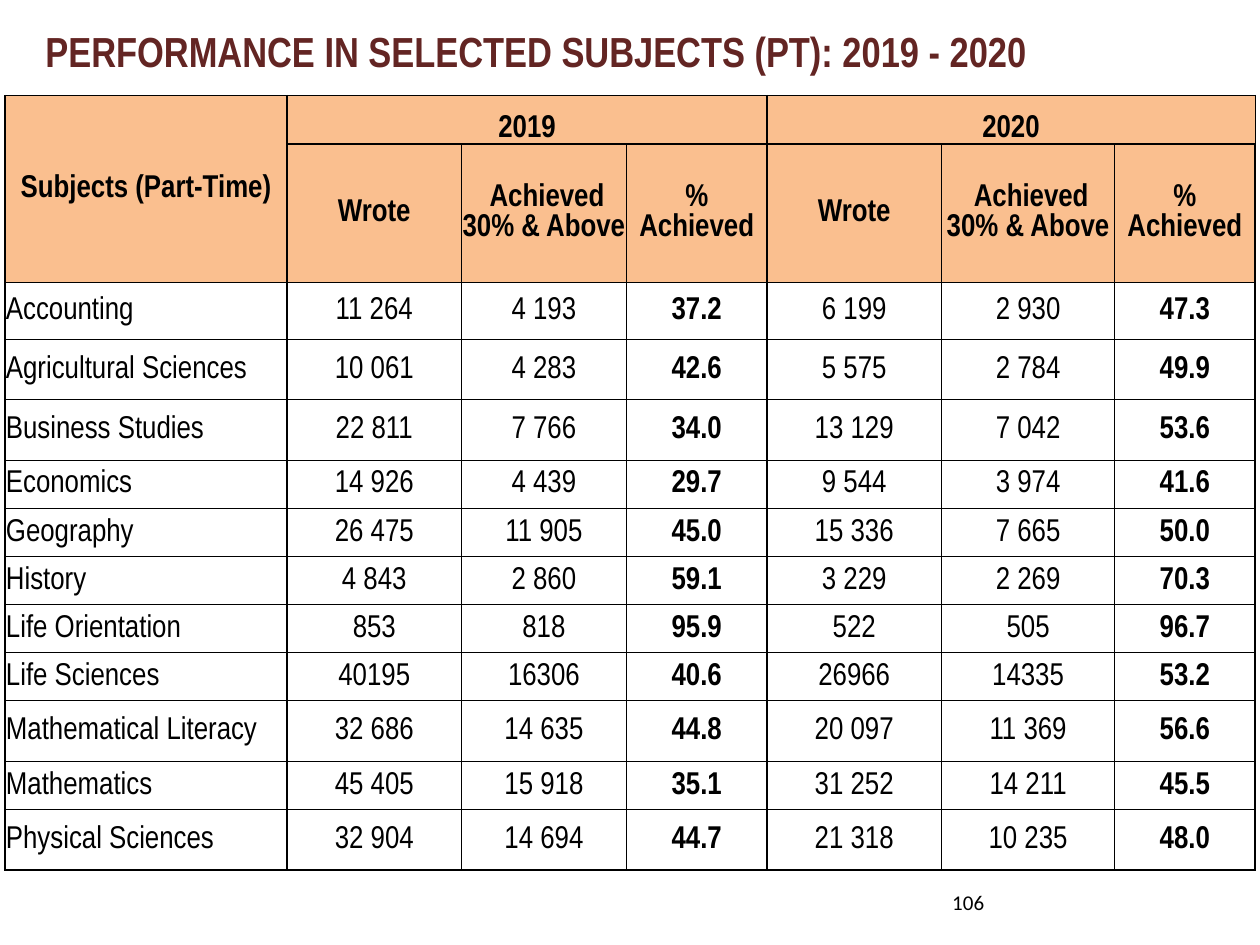
"""Build the slide on part-time performance in selected subjects, 2019 - 2020."""
import dataclasses

import pptx
import pptx.dml.color
import pptx.enum.text
import pptx.oxml
import pptx.oxml.ns
import pptx.util

Cm = pptx.util.Cm
Pt = pptx.util.Pt
RGBColor = pptx.dml.color.RGBColor
ALIGN = pptx.enum.text.PP_ALIGN
ANCHOR = pptx.enum.text.MSO_ANCHOR

BLACK = RGBColor(0x00, 0x00, 0x00)
MAROON = RGBColor(0x63, 0x25, 0x23)
PEACH = RGBColor(0xFA, 0xBF, 0x8F)

COL_WIDTHS = (5.69, 3.51, 3.33, 2.83, 3.52, 3.49, 2.83)
HEADER_HEIGHTS = (0.97, 2.79)
LOW, MID, HIGH = 0.97, 1.15, 1.22
PERCENT_COLS = (3, 6)
THICK_COL_EDGES = (0, 1, 4, 7)
THICK_ROW_EDGES = (0, 1, 2, 13)
YEAR_HEADS = ("Wrote", " Achieved 30% & Above", "% Achieved")


@dataclasses.dataclass
class Subject:
    """One subject with its row height and its figures for both years."""

    name: str
    height: float
    y2019: tuple[str, str, str]
    y2020: tuple[str, str, str]


SUBJECTS = [
    Subject("Accounting", MID, ("11 264", "4 193", "37.2"), ("6 199", "2 930", "47.3")),
    Subject("Agricultural Sciences", HIGH, ("10 061", "4 283", "42.6"), ("5 575", "2 784", "49.9")),
    Subject("Business Studies", HIGH, ("22 811", "7 766", "34.0"), ("13 129", "7 042", "53.6")),
    Subject("Economics", LOW, ("14 926", "4 439", "29.7"), ("9 544", "3 974", "41.6")),
    Subject("Geography", LOW, ("26 475", "11 905", "45.0"), ("15 336", "7 665", "50.0")),
    Subject("History", LOW, ("4 843", "2 860", "59.1"), ("3 229", "2 269", "70.3")),
    Subject("Life Orientation", LOW, ("853", "818", "95.9"), ("522", "505", "96.7")),
    Subject("Life Sciences", LOW, ("40195", "16306", "40.6"), ("26966", "14335", "53.2")),
    Subject("Mathematical Literacy", HIGH, ("32 686", "14 635", "44.8"), ("20 097", "11 369", "56.6")),
    Subject("Mathematics", LOW, ("45 405", "15 918", "35.1"), ("31 252", "14 211", "45.5")),
    Subject("Physical Sciences", HIGH, ("32 904", "14 694", "44.7"), ("21 318", "10 235", "48.0")),
]


def format_text(p, size: float, name: str, color: RGBColor, bold: bool, align) -> None:
    """Set the alignment and font of a paragraph."""
    p.alignment = align
    p.font.size = Pt(size)
    p.font.name = name
    p.font.bold = bold
    p.font.color.rgb = color


def set_borders(cell, row: int, col: int) -> None:
    """Draw thick lines on group edges and thin lines elsewhere."""
    edges = {
        "lnL": col in THICK_COL_EDGES,
        "lnR": col + 1 in THICK_COL_EDGES,
        "lnT": row in THICK_ROW_EDGES,
        "lnB": row + 1 in THICK_ROW_EDGES,
    }
    tcPr = cell._tc.get_or_add_tcPr()
    for tag, thick in edges.items():
        tcPr.append(pptx.oxml.parse_xml(
            f'<a:{tag} {pptx.oxml.ns.nsdecls("a")} w="{Pt(1 if thick else 0.5)}">'
            f'<a:solidFill><a:srgbClr val="{BLACK}"/></a:solidFill></a:{tag}>'
        ))


def fill_cell(cell, row: int, col: int, text: str) -> None:
    """Format one table cell by its place in the grid."""
    header = row < len(HEADER_HEIGHTS)
    set_borders(cell, row, col)
    if header:
        cell.fill.solid()
        cell.fill.fore_color.rgb = PEACH
    else:
        cell.fill.background()
    cell.margin_left = cell.margin_right = cell.margin_top = Cm(0.02)
    cell.margin_bottom = 0
    cell.vertical_anchor = ANCHOR.BOTTOM if row == 0 and col > 0 else ANCHOR.MIDDLE
    cell.text = text
    align = ALIGN.CENTER if header or col > 0 else ALIGN.LEFT
    bold = header or col in PERCENT_COLS
    format_text(cell.text_frame.paragraphs[0], 18, "Arial Narrow", BLACK, bold, align)


def add_results_table(s) -> None:
    """Add the table of results by subject and year."""
    rows = [
        ("Subjects (Part-Time)", "2019", "", "", "2020", "", ""),
        ("", *YEAR_HEADS, *YEAR_HEADS),
        *((subject.name, *subject.y2019, *subject.y2020) for subject in SUBJECTS),
    ]
    heights = (*HEADER_HEIGHTS, *(subject.height for subject in SUBJECTS))
    table = s.shapes.add_table(
        len(rows), len(COL_WIDTHS), Cm(0.1), Cm(1.93), Cm(sum(COL_WIDTHS)), Cm(sum(heights))
    ).table
    table.first_row = table.horz_banding = False
    for column, width in zip(table.columns, COL_WIDTHS):
        column.width = Cm(width)
    for row, height in zip(table.rows, heights):
        row.height = Cm(height)
    for i, texts in enumerate(rows):
        for j, text in enumerate(texts):
            fill_cell(table.cell(i, j), i, j, text)
    table.cell(0, 0).merge(table.cell(1, 0))
    for first in (1, 4):
        table.cell(0, first).merge(table.cell(0, first + 2))


def add_title(s) -> None:
    """Place and format the slide title."""
    sp = s.shapes.title
    sp.left, sp.top, sp.width, sp.height = Cm(0.51), Cm(-0.08), Cm(20.6), Cm(2.21)
    tf = sp.text_frame
    tf.text = "PERFORMANCE IN SELECTED SUBJECTS (PT): 2019 - 2020"
    tf.vertical_anchor = ANCHOR.MIDDLE
    format_text(tf.paragraphs[0], 24, "Arial Narrow", MAROON, True, ALIGN.CENTER)


def add_page_number(s) -> None:
    """Add the page number below the table."""
    tf = s.shapes.add_textbox(Cm(18.69), Cm(17.53), Cm(1.4), Cm(1.3)).text_frame
    tf.word_wrap = True
    tf.vertical_anchor = ANCHOR.MIDDLE
    tf.text = "106"
    format_text(tf.paragraphs[0], 12, "Calibri", BLACK, False, ALIGN.RIGHT)


def main() -> None:
    """Build and save the presentation."""
    prs = pptx.Presentation()
    prs.slide_width, prs.slide_height = Cm(25.4), Cm(19.05)
    s = prs.slides.add_slide(prs.slide_layouts[5])
    add_title(s)
    add_results_table(s)
    add_page_number(s)
    prs.save("out.pptx")


if __name__ == "__main__":
    main()
